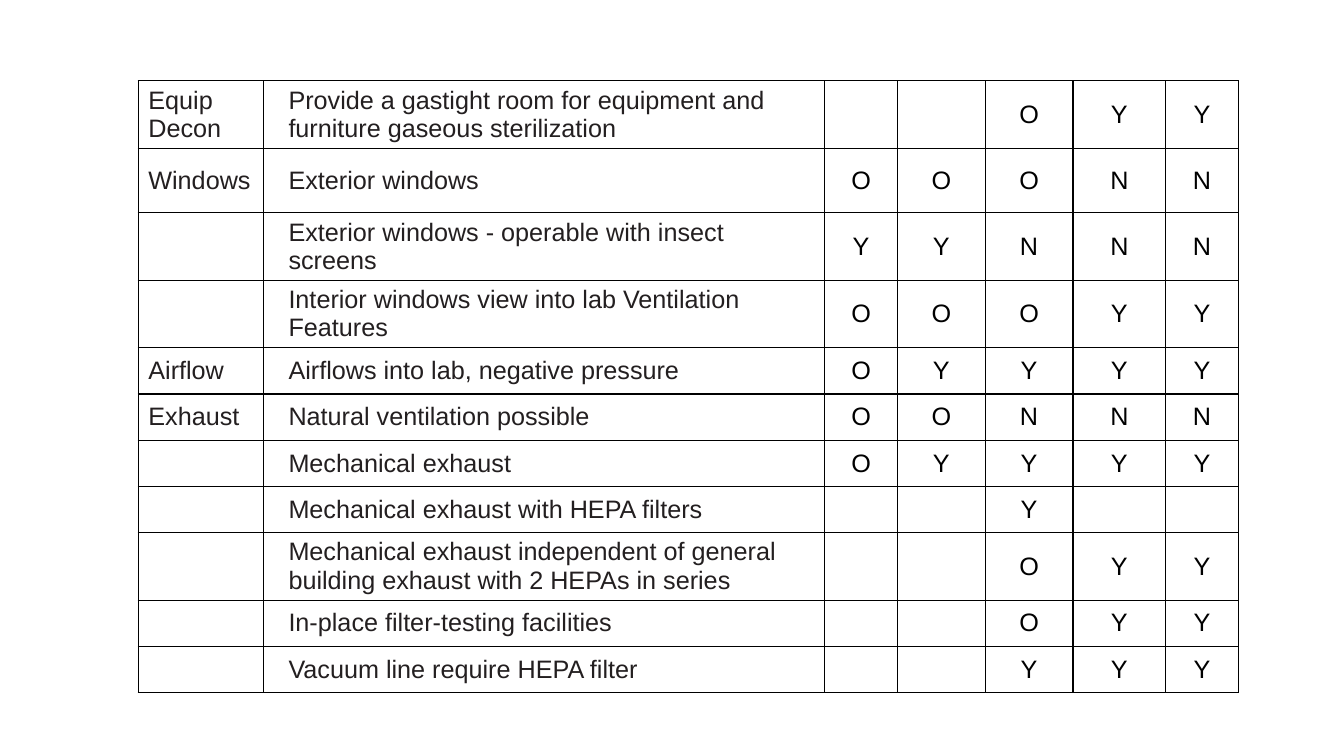
import pptx
import pptx.util
import pptx.dml.color
import pptx.enum.text
import pptx.oxml
import pptx.oxml.ns

Pt = pptx.util.Pt
ALIGN = pptx.enum.text.PP_ALIGN
INK = pptx.dml.color.RGBColor(0x23, 0x1F, 0x20)
BLACK = pptx.dml.color.RGBColor(0, 0, 0)

REQUIREMENTS = [
    ("Equip Decon", "Provide a gastight room for equipment and furniture gaseous sterilization", "  OYY", 48.3),
    ("Windows", "Exterior windows", "OOONN", 46),
    ("", "Exterior windows - operable with insect screens", "YYNNN", 48.3),
    ("", "Interior windows view into lab Ventilation Features", "OOOYY", 48.3),
    ("Airflow", "Airflows into lab, negative pressure", "OYYYY", 33),
    ("Exhaust", "Natural ventilation possible", "OONNN", 33),
    ("", "Mechanical exhaust", "OYYYY", 33),
    ("", "Mechanical exhaust with HEPA filters", "  Y  ", 33),
    ("", "Mechanical exhaust independent of general building exhaust with 2 HEPAs in series", "  OYY", 48.3),
    ("", "In-place filter-testing facilities", "  OYY", 33),
    ("", "Vacuum line require HEPA filter", "  YYY", 33),
]
COLUMN_WIDTHS = [89.3, 401, 52, 62.7, 62.7, 66.3, 51.8]
TABLE_LEFT, TABLE_TOP = 98.8, 57.6
CATEGORY = dict(indent=2.2, before=0.5, color=INK)
FEATURE = dict(indent=13, before=0.5, color=INK)
RATING = dict(align=ALIGN.CENTER, after=10, color=BLACK)
FORMATS = [CATEGORY, FEATURE] + [RATING] * 5


def write(cell, text, color, align=ALIGN.LEFT, indent=0, before=0, after=0):
    cell.vertical_anchor = pptx.enum.text.MSO_ANCHOR.MIDDLE
    cell.margin_left = cell.margin_right = Pt(5)
    cell.margin_top = cell.margin_bottom = 0
    paragraph = cell.text_frame.paragraphs[0]
    paragraph.alignment = align
    paragraph.space_before, paragraph.space_after = Pt(before), Pt(after)
    properties = paragraph._p.get_or_add_pPr()
    properties.set("marL", str(Pt(indent)))
    properties.set("indent", "0")
    paragraph.font.size = Pt(18)
    if text:
        run = paragraph.add_run()
        run.text = text
        run.font.name, run.font.size = "Arial", Pt(18)
        run.font.color.rgb = color


def outline(cell):
    properties = cell._tc.get_or_add_tcPr()
    for position, side in enumerate(("lnL", "lnR", "lnT", "lnB")):
        properties.insert(position, pptx.oxml.parse_xml(
            f'<a:{side} {pptx.oxml.ns.nsdecls("a")} w="{Pt(1)}"><a:solidFill>'
            f'<a:srgbClr val="{BLACK}"/></a:solidFill></a:{side}>'))


deck = pptx.Presentation()
deck.slide_width, deck.slide_height = Pt(960), Pt(540)
slide = deck.slides.add_slide(deck.slide_layouts[6])
total_height = sum(height for *_, height in REQUIREMENTS)
table = slide.shapes.add_table(
    len(REQUIREMENTS), len(COLUMN_WIDTHS), Pt(TABLE_LEFT), Pt(TABLE_TOP),
    Pt(sum(COLUMN_WIDTHS)), Pt(total_height)).table
table.first_row = table.horz_banding = False

for column, width in zip(table.columns, COLUMN_WIDTHS):
    column.width = Pt(width)
for row, (category, feature, ratings, height) in zip(table.rows, REQUIREMENTS):
    row.height = Pt(height)
    for cell, text, style in zip(row.cells, [category, feature, *ratings], FORMATS):
        write(cell, text.strip(), **style)
        cell.fill.background()
        outline(cell)

deck.save("out.pptx")
